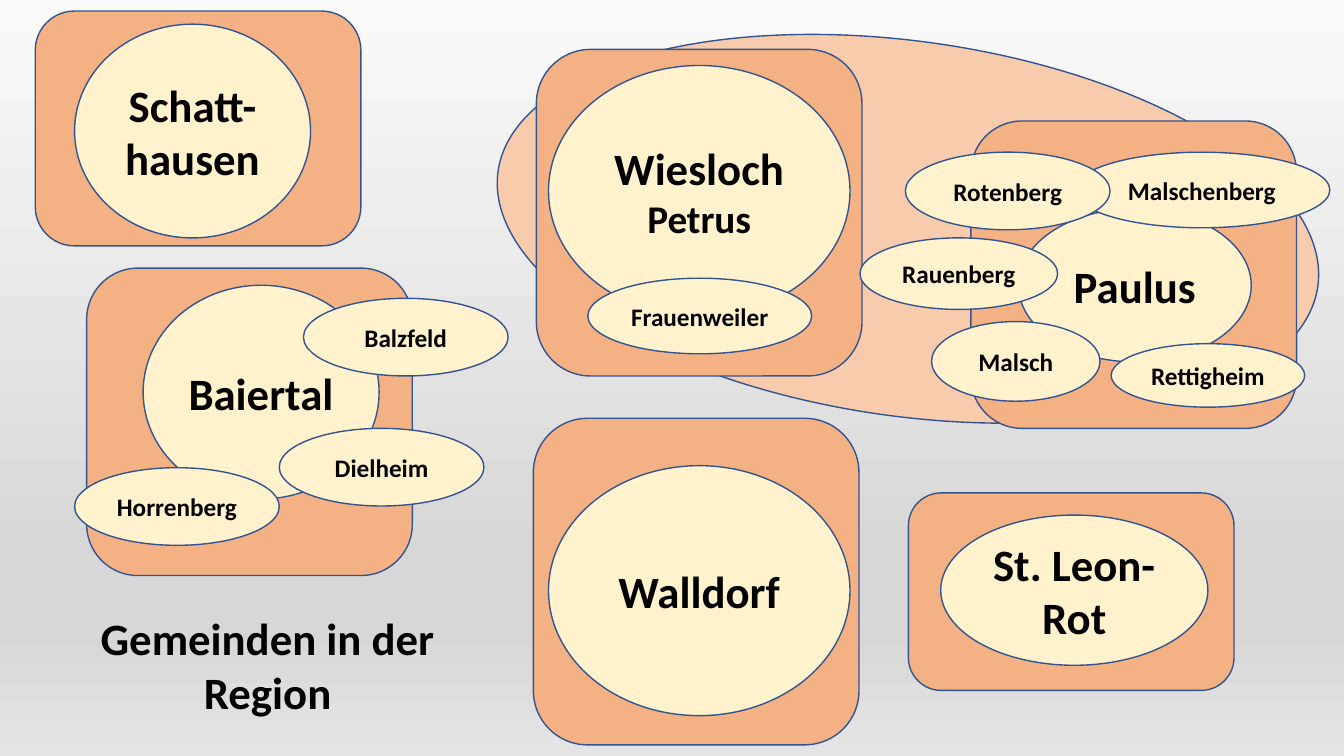
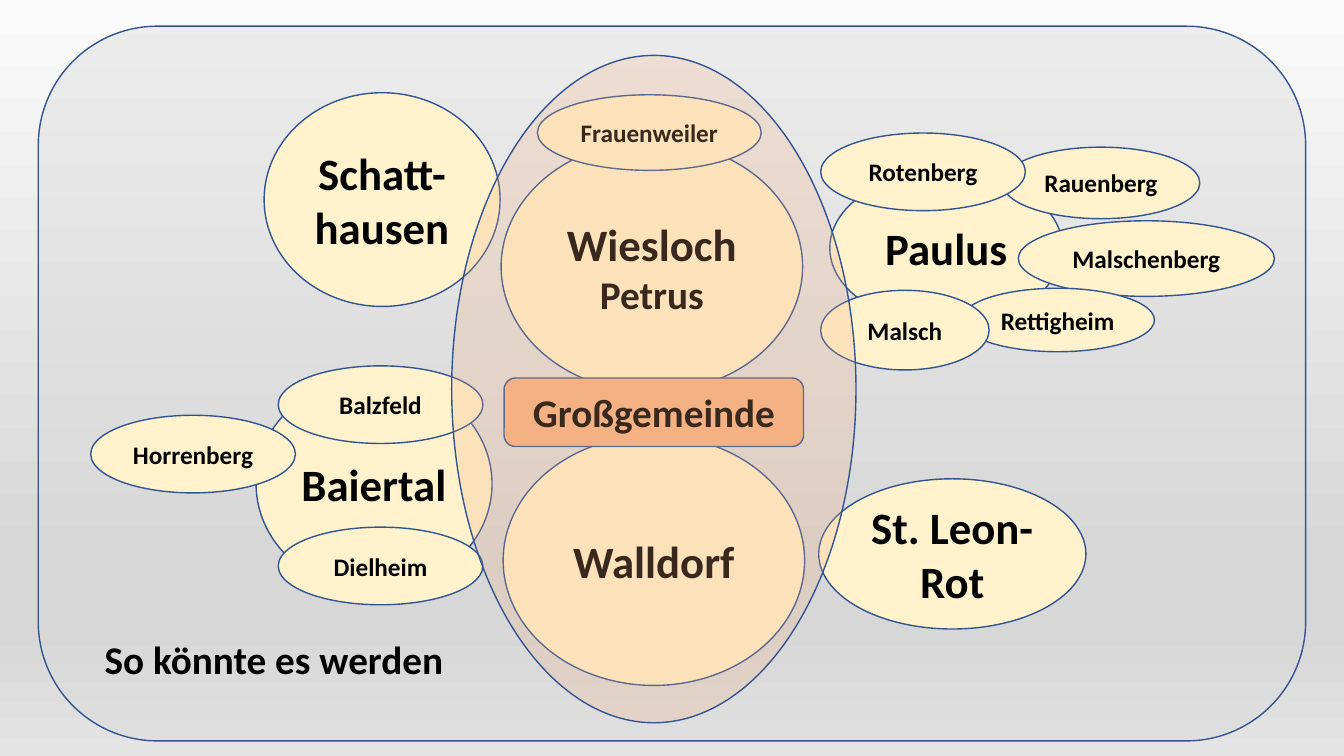
from dataclasses import dataclass

from lxml import etree
from pptx import Presentation
from pptx import util as u
from pptx.dml import color
from pptx.enum import shapes, text
from pptx.oxml import ns

PX = 9144
SLIDE_SIZE = (1333, 750)


@dataclass(frozen=True)
class Theme:
    """Colours, font and type sizes of both slides."""

    font: str = "Calibri"
    ink: str = "000000"
    outline: str = "325491"
    town: str = "FFF2CC"
    parish: str = "F4B183"
    union: str = "F8CBAD"
    panel: str = "D9D9D9"
    backdrop: tuple = ((0, "FAFAFA"), (74, "D7D7D7"), (83, "D7D7D7"), (100, "E4E4E4"))
    large: int = 32
    medium: int = 28
    small: int = 18


THEME = Theme()
OVAL = shapes.MSO_SHAPE.OVAL
ROUNDED = shapes.MSO_SHAPE.ROUNDED_RECTANGLE

TOWNS = {
    "Wiesloch": (299, 249),
    "Walldorf": (299, 248),
    "St. Leon-Rot": (265, 149),
    "Paulus": (231, 152),
    "Baiertal": (234, 212),
    "Schatt-hausen": (234, 212),
}
VILLAGES = {
    "Malschenberg": (254, 75),
    "Frauenweiler": (222, 75),
    "Rauenberg": (196, 71),
    "Rettigheim": (192, 63),
    "Malsch": (167, 79),
    "Rotenberg": (203, 77),
    "Dielheim": (203, 77),
    "Horrenberg": (203, 77),
    "Balzfeld": (203, 77),
}
SUBTITLES = {"Wiesloch": "Petrus"}

CURRENT_PARISHES = [
    ((35, 11, 323, 233), {"Schatt-hausen": (39, 13)}),
    ((86, 266, 323, 305), {
        "Baiertal": (56, 17),
        "Dielheim": (191, 159),
        "Horrenberg": (-12, 198),
        "Balzfeld": (215, 30),
    }),
    ((532, 49, 323, 324), {"Wiesloch": (12, 16), "Frauenweiler": (51, 227)}),
    ((529, 415, 323, 324), {"Walldorf": (15, 47)}),
    ((963, 120, 323, 305), {
        "Paulus": (47, 87),
        "Malschenberg": (102, 31),
        "Rauenberg": (-110, 116),
        "Rettigheim": (139, 221),
        "Malsch": (-39, 199),
        "Rotenberg": (-65, 31),
    }),
    ((901, 489, 323, 196), {"St. Leon-Rot": (32, 22)}),
]
FUTURE_CLUSTERS = [
    ((497, 140), {"Wiesloch": (0, 0), "Frauenweiler": (36, -46)}),
    ((499, 432), {"Walldorf": (0, 0)}),
    ((812, 475), {"St. Leon-Rot": (0, 0)}),
    ((823, 170), {
        "Paulus": (0, 0),
        "Malschenberg": (187, 49),
        "Rauenberg": (171, -24),
        "Rettigheim": (130, 116),
        "Malsch": (-9, 118),
        "Rotenberg": (-9, -38),
    }),
    ((254, 374), {
        "Baiertal": (0, 0),
        "Dielheim": (22, 149),
        "Horrenberg": (-164, 38),
        "Balzfeld": (22, -11),
    }),
    ((262, 92), {"Schatt-hausen": (0, 0)}),
]


def emu(*lengths):
    """Turn px lengths into EMU."""
    return [u.Emu(length * PX) for length in lengths]


def rgb(code):
    """Turn a hex code into a colour."""
    return color.RGBColor.from_string(code)


def write(frame, content, size=THEME.large, align=text.PP_ALIGN.CENTER, new=False):
    """Write one bold paragraph into a text frame."""
    paragraph = frame.add_paragraph() if new else frame.paragraphs[0]
    paragraph.alignment = align
    run = paragraph.add_run()
    run.text = content
    run.font.name = THEME.font
    run.font.size = u.Pt(size)
    run.font.bold = True
    run.font.color.rgb = rgb(THEME.ink)


def add_outlined(slide, kind, box, fill, opacity=100):
    """Add an outlined preset shape and return it."""
    shape = slide.shapes.add_shape(kind, *emu(*box))
    shape.shadow.inherit = False
    shape.fill.solid()
    shape.fill.fore_color.rgb = rgb(fill)
    if opacity < 100:
        tint = shape.element.spPr.find(".//" + ns.qn("a:srgbClr"))
        etree.SubElement(tint, ns.qn("a:alpha"), val=str(opacity * 1000))
    shape.line.color.rgb = rgb(THEME.outline)
    shape.line.width = u.Pt(1)
    frame = shape.text_frame
    frame.word_wrap = True
    frame.vertical_anchor = text.MSO_ANCHOR.MIDDLE
    frame.margin_left, frame.margin_right = emu(5, 5)
    return shape


def add_place(slide, name, left, top):
    """Add the oval of a town or a village."""
    is_town = name in TOWNS
    width, height = TOWNS[name] if is_town else VILLAGES[name]
    frame = add_outlined(slide, OVAL, (left, top, width, height), THEME.town).text_frame
    write(frame, name, size=THEME.large if is_town else THEME.small)
    if name in SUBTITLES:
        write(frame, SUBTITLES[name], size=THEME.medium, new=True)


def add_cluster(slide, origin, places):
    """Add places at offsets from an origin."""
    left, top = origin
    for name, (across, down) in places.items():
        add_place(slide, name, left + across, top + down)


def add_parish(slide, box, places):
    """Add a parish frame and the places that belong to it."""
    add_outlined(slide, ROUNDED, box, THEME.parish)
    add_cluster(slide, box[:2], places)


def add_title(slide, box, content, **style):
    """Add the slide title as a wrapped text box."""
    frame = slide.shapes.add_textbox(*emu(*box)).text_frame
    frame.word_wrap = True
    write(frame, content, **style)


def set_backdrop(master):
    """Give every slide the vertical grey gradient."""
    fill = master.background.fill
    fill.gradient()
    fill.gradient_angle = 270
    stops = master.element.cSld.find(".//" + ns.qn("a:gsLst"))
    for stop in list(stops):
        stops.remove(stop)
    for position, code in THEME.backdrop:
        stop = etree.SubElement(stops, ns.qn("a:gs"), pos=str(position * 1000))
        etree.SubElement(stop, ns.qn("a:srgbClr"), val=code)


def build_current(slide):
    """Show the parishes as they are today."""
    union = add_outlined(slide, OVAL, (490, 41, 821, 372), THEME.union)
    union.rotation = 8
    for box, places in CURRENT_PARISHES:
        add_parish(slide, box, places)
    add_title(slide, (50, 601, 431, 118), "Gemeinden in der Region")


def build_future(slide):
    """Show the proposed large parish."""
    add_outlined(slide, ROUNDED, (38, 26, 1257, 709), THEME.panel, opacity=39)
    for origin, places in FUTURE_CLUSTERS:
        add_cluster(slide, origin, places)
    label = add_outlined(slide, ROUNDED, (500, 375, 297, 68), THEME.parish)
    write(label.text_frame, "Großgemeinde", size=THEME.medium)
    add_outlined(slide, OVAL, (448, 55, 401, 662), THEME.parish, opacity=23)
    add_title(slide, (94, 625, 369, 57), "So könnte es werden",
              size=THEME.medium, align=text.PP_ALIGN.LEFT)


def main():
    """Build and save the presentation."""
    presentation = Presentation()
    presentation.slide_width, presentation.slide_height = emu(*SLIDE_SIZE)
    set_backdrop(presentation.slide_master)
    for build in (build_current, build_future):
        build(presentation.slides.add_slide(presentation.slide_layouts[6]))
    presentation.save("out.pptx")


if __name__ == "__main__":
    main()
